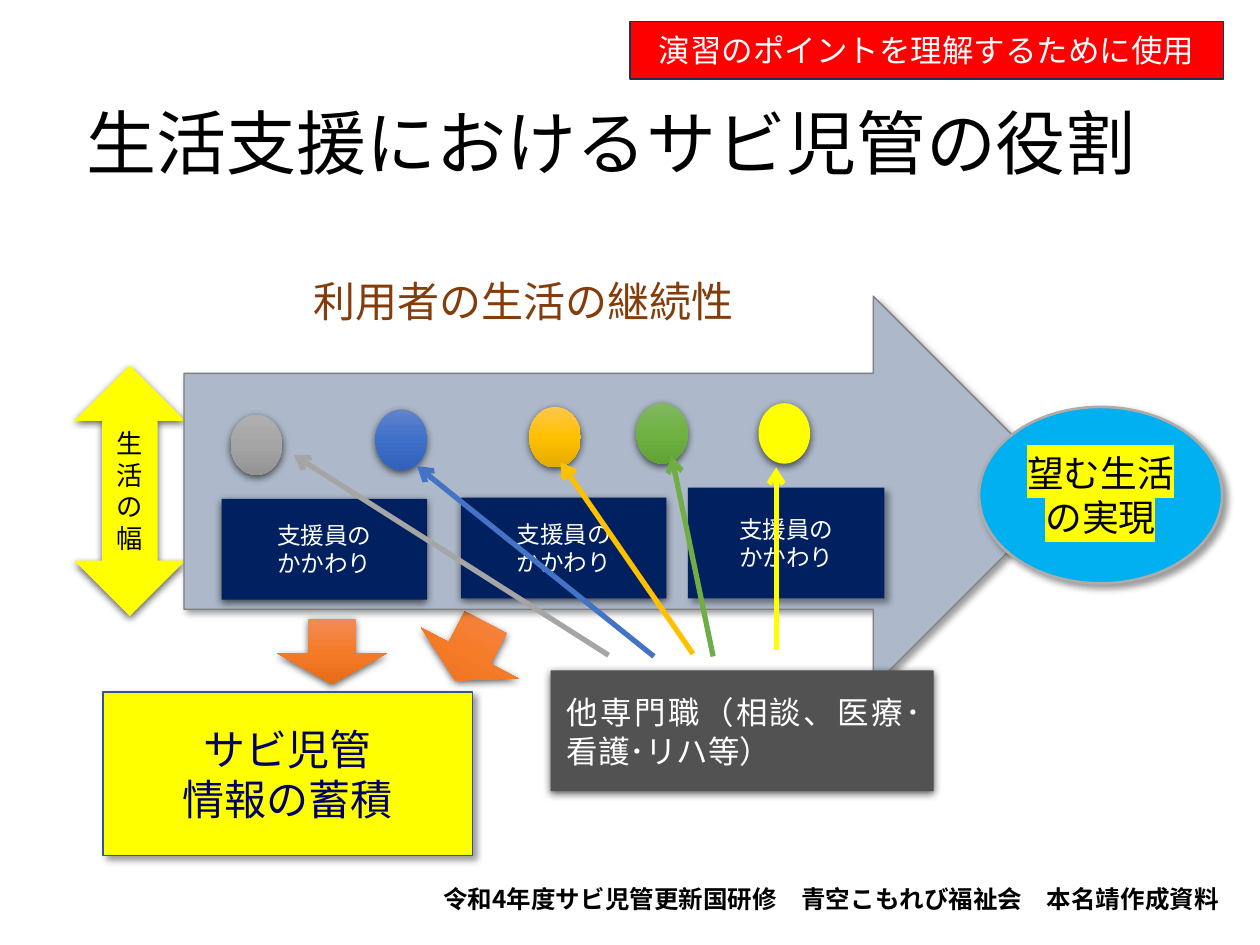
from copy import deepcopy

from lxml.etree import SubElement
from pptx import Presentation
from pptx.dml.color import RGBColor
from pptx.enum.shapes import MSO_CONNECTOR, MSO_SHAPE as SHAPE
from pptx.enum.text import MSO_ANCHOR, MSO_AUTO_SIZE, PP_ALIGN as ALIGN
from pptx.oxml.ns import qn
from pptx.util import Inches, Pt

BLACK = RGBColor(0x00, 0x00, 0x00)
WHITE = RGBColor(0xFF, 0xFF, 0xFF)
YELLOW = RGBColor(0xFF, 0xFF, 0x00)
RED = RGBColor(0xFF, 0x00, 0x00)
BROWN = RGBColor(0x84, 0x3C, 0x0B)
NAVY = RGBColor(0x00, 0x20, 0x60)
INK = RGBColor(0x00, 0x00, 0x66)
SKY = RGBColor(0x00, 0xB0, 0xF0)
STEEL = RGBColor(0xAD, 0xB9, 0xCA)
CHARCOAL = RGBColor(0x52, 0x52, 0x52)
MID_GRAY = RGBColor(0x80, 0x80, 0x80)
SILVER = RGBColor(0xAF, 0xAB, 0xAB)
BOX_EDGE = RGBColor(0x32, 0x54, 0x91)
BANNER_EDGE = RGBColor(0x1E, 0x32, 0x56)
GRAY = RGBColor(0xA5, 0xA5, 0xA5)
BLUE = RGBColor(0x44, 0x72, 0xC4)
GOLD = RGBColor(0xFF, 0xC0, 0x00)
GREEN = RGBColor(0x70, 0xAD, 0x47)


def gradient(*stops):
    return [RGBColor.from_string(stop) for stop in stops]


ORANGE_FADE = gradient("F18C57", "F67B28", "E56C19")
GRAY_FADE = gradient("AFAFAF", "A5A5A5", "939393")
BLUE_FADE = gradient("6183CB", "3E70CA", "3062BB")
GOLD_FADE = gradient("FFC64B", "FFC000", "E3AB00")
GREEN_FADE = gradient("81B861", "6FB242", "62A336")

BELOW = (63, 4.5, 1.5, 90)
DIAGONAL = (40, 4, 3, 45)


class RoleSlide:
    """Draws the elements of one slide in a shared style."""

    font = "Noto Sans CJK JP"
    title_font = "Calibri"

    def __init__(self, slide):
        self.slide = slide

    def shadow(self, effects, opacity, blur, distance, angle):
        outer = SubElement(effects, qn("a:outerShdw"), blurRad=str(Pt(blur)),
                           dist=str(Pt(distance)), dir=str(angle * 60000), rotWithShape="0")
        black = SubElement(outer, qn("a:srgbClr"), val=str(BLACK))
        SubElement(black, qn("a:alpha"), val=str(opacity * 1000))

    def put_text(self, frame, lines, size, color, align=ALIGN.CENTER, font=None, bold=False):
        frame.word_wrap = True
        frame.vertical_anchor = MSO_ANCHOR.MIDDLE
        frame.text = "\n".join(lines)
        for paragraph in frame.paragraphs:
            paragraph.alignment = align
            paragraph.font.size = Pt(size)
            paragraph.font.bold = bold
            paragraph.font.color.rgb = color
            paragraph.font.name = font or self.font
            SubElement(paragraph.font._element, qn("a:ea"), typeface=self.font)

    def title(self, text, box):
        title = self.slide.shapes.title
        title.left, title.top, title.width, title.height = map(Inches, box)
        self.put_text(title.text_frame, [text], 40, BLACK, ALIGN.LEFT, self.title_font)
        title.text_frame.auto_size = MSO_AUTO_SIZE.NONE
        title.text_frame.paragraphs[0].line_spacing = 0.9

    def label(self, text, box, size, color, bold=False):
        label = self.slide.shapes.add_textbox(*map(Inches, box))
        self.put_text(label.text_frame, [text], size, color, ALIGN.LEFT, bold=bold)
        return label.text_frame.paragraphs[0]

    def shape(self, kind, box, fill, shadow=None, edge=None, edge_width=1, adjust=(), rotation=0):
        shape = self.slide.shapes.add_shape(kind, *map(Inches, box))
        shape.rotation = rotation
        for index, value in enumerate(adjust):
            shape.adjustments[index] = value
        if isinstance(fill, list):
            self.fade(shape, fill)
        else:
            shape.fill.solid()
            shape.fill.fore_color.rgb = fill
        if edge is None:
            shape.line.fill.background()
        else:
            shape.line.color.rgb = edge
            shape.line.width = Pt(edge_width)
        shape.shadow.inherit = False
        if shadow:
            self.shadow(shape._element.spPr.find(qn("a:effectLst")), *shadow)
        return shape.text_frame

    def fade(self, shape, colors):
        shape.fill.gradient()
        shape.fill.gradient_angle = 270
        first = shape._element.spPr.find(qn("a:gradFill")).find(qn("a:gsLst"))[0]
        first.addnext(deepcopy(first))
        for index, (stop, color) in enumerate(zip(shape.fill.gradient_stops, colors)):
            stop.position = index / 2
            stop.color.rgb = color

    def arrow(self, start, end, color):
        arrow = self.slide.shapes.add_connector(MSO_CONNECTOR.STRAIGHT, *map(Inches, start + end))
        arrow.line.color.rgb = color
        arrow.line.width = Pt(3)
        properties = arrow._element.spPr
        SubElement(properties.find(qn("a:ln")), qn("a:tailEnd"), type="arrow")
        SubElement(properties, qn("a:effectLst"))


def main():
    deck = Presentation()
    deck.slide_width, deck.slide_height = Inches(10), Inches(7.5)
    role = RoleSlide(deck.slides.add_slide(deck.slide_layouts[5]))
    role.title("生活支援におけるサビ児管の役割", (0.59, 0.44, 8.9, 1.45))

    for left, rotation in ((2.2, 0), (3.3, 27.5)):
        role.shape(SHAPE.DOWN_ARROW, (left, 4.91, 0.87, 0.52), ORANGE_FADE, BELOW,
                   adjust=(0.43, 0.471), rotation=rotation)

    continuity = role.label("利用者の生活の継続性", (2.39, 2.13, 4.29, 0.52), 24, BROWN)
    continuity_properties = continuity.runs[0]._r.get_or_add_rPr()
    role.shadow(SubElement(continuity_properties, qn("a:effectLst")), *DIAGONAL)

    records = role.shape(SHAPE.RECTANGLE, (0.82, 5.49, 2.93, 1.3), YELLOW, DIAGONAL, BOX_EDGE)
    role.put_text(records, ["サビ児管", "情報の蓄積"], 24, INK)
    breadth = role.shape(SHAPE.UP_DOWN_ARROW, (0.59, 2.9, 0.88, 1.99), YELLOW, BELOW)
    role.put_text(breadth, ["生活の幅"], 15, BLACK)
    role.shape(SHAPE.RIGHT_ARROW, (1.46, 2.35, 7.02, 3.1), STEEL, DIAGONAL, MID_GRAY, 0.75,
               adjust=(0.604, 0.5))

    for box, shadow in (((1.76, 3.96, 1.63, 0.8), BELOW),
                        ((3.66, 3.95, 1.63, 0.8), BELOW),
                        ((5.46, 3.87, 1.56, 0.88), DIAGONAL)):
        support = role.shape(SHAPE.RECTANGLE, box, NAVY, shadow)
        role.put_text(support, ["支援員の", "かかわり"], 13.5, WHITE)

    contacts = (
        (1.83, 3.29, GRAY_FADE, (4.83, 5.2), (2.33, 3.61), GRAY),
        (2.98, 3.25, BLUE_FADE, (5.19, 5.21), (3.31, 3.7), BLUE),
        (4.2, 3.23, GOLD_FADE, (5.5, 5.19), (4.45, 3.67), GOLD),
        (5.05, 3.2, GREEN_FADE, (5.66, 5.21), (5.33, 3.62), GREEN),
        (6.02, 3.2, YELLOW, (6.16, 5.16), (6.16, 3.71), YELLOW),
    )
    for left, top, fill, *_ in contacts:
        role.shape(SHAPE.OVAL, (left, top, 0.41, 0.48), fill, BELOW)
    for *_, start, end, color in contacts:
        role.arrow(start, end, color)

    specialists = role.shape(SHAPE.RECTANGLE, (4.37, 5.32, 3.04, 0.96), CHARCOAL, BELOW)
    role.put_text(specialists, ["他専門職（相談、医療･看護･リハ等）"], 18, WHITE, ALIGN.JUSTIFY)
    specialists.paragraphs[0].line_spacing = Pt(22.5)
    specialists.paragraphs[0]._p.get_or_add_pPr().set("marL", str(Inches(0.03)))

    goal = role.shape(SHAPE.OVAL, (7.77, 3.23, 1.93, 1.4), SKY, DIAGONAL, SILVER, 1.5)
    role.put_text(goal, ["望む生活の実現"], 21, BLACK)
    goal_properties = goal.paragraphs[0].runs[0]._r.get_or_add_rPr()
    highlight = SubElement(goal_properties, qn("a:highlight"))
    SubElement(highlight, qn("a:srgbClr"), val=str(YELLOW))

    role.label("令和4年度サビ児管更新国研修　青空こもれび福祉会　本名靖作成資料",
               (3.42, 6.96, 6.54, 0.34), 14, BLACK, bold=True)
    banner = role.shape(SHAPE.RECTANGLE, (5, 0.17, 4.71, 0.46), RED, edge=BANNER_EDGE)
    role.put_text(banner, ["演習のポイントを理解するために使用"], 18, WHITE, font=role.title_font)

    deck.save("out.pptx")


if __name__ == "__main__":
    main()
